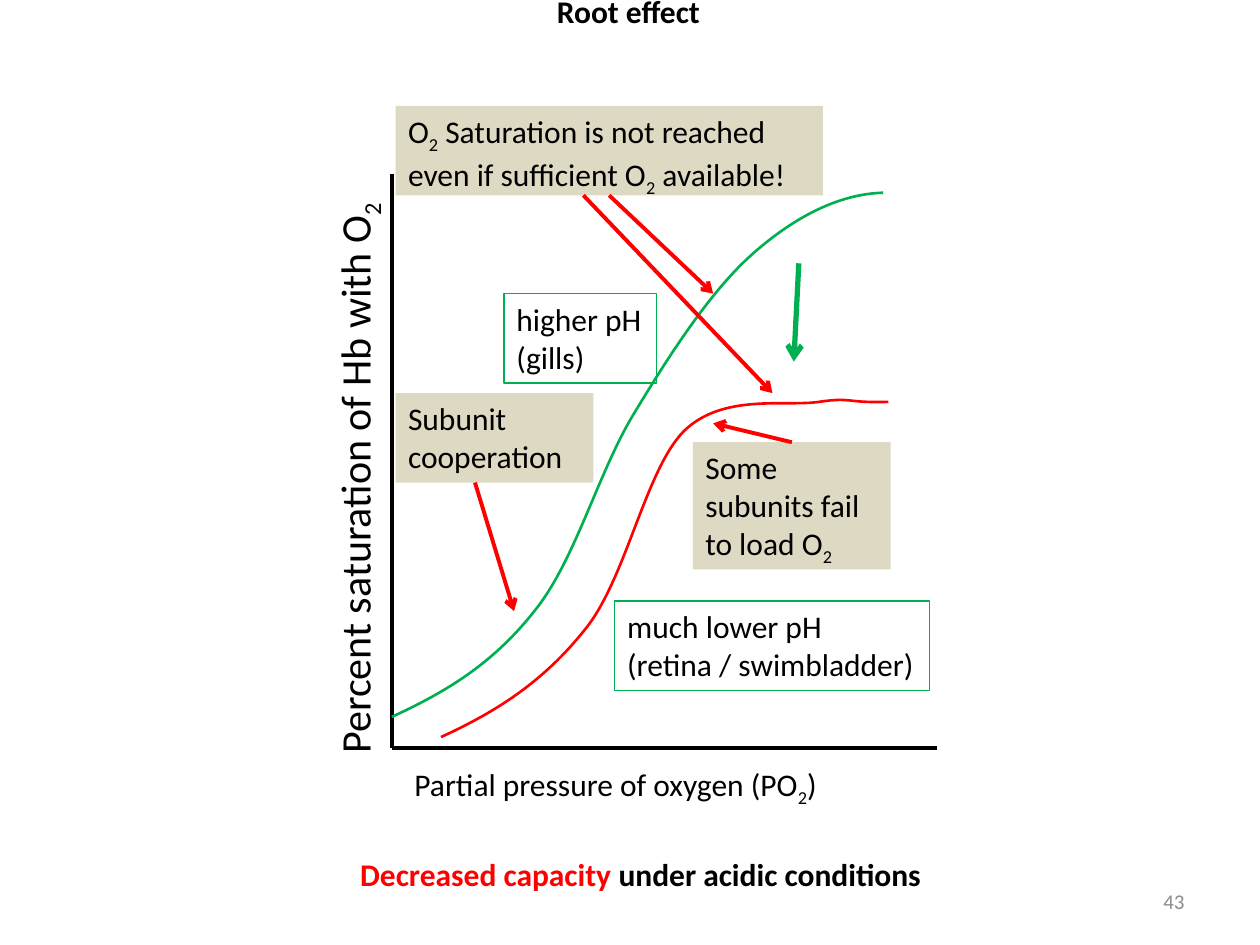
from dataclasses import dataclass

from lxml import etree
from pptx import Presentation
from pptx.dml.color import RGBColor
from pptx.enum.shapes import MSO_CONNECTOR
from pptx.enum.text import MSO_ANCHOR, MSO_AUTO_SIZE, PP_ALIGN
from pptx.oxml.ns import qn
from pptx.util import Inches, Pt

STRAIGHT = MSO_CONNECTOR.STRAIGHT
MIDDLE, TOP = MSO_ANCHOR.MIDDLE, MSO_ANCHOR.TOP
GROW, FIXED = MSO_AUTO_SIZE.SHAPE_TO_FIT_TEXT, MSO_AUTO_SIZE.NONE
LEFT, RIGHT = PP_ALIGN.LEFT, PP_ALIGN.RIGHT
TOP_SIDE, BOTTOM_SIDE = 0, 2


@dataclass(frozen=True)
class Theme:
    font: str = "Calibri"
    black: str = "000000"
    gray: str = "8C8C8C"
    green: str = "00B050"
    red: str = "FF0000"
    tan: str = "DDD9C3"
    small: int = 12
    body: int = 18
    large: int = 24


THEME = Theme()


def rgb(code):
    return RGBColor.from_string(code)


def style(run, size, color, bold=False):
    font = run.font
    font.name, font.size, font.bold = THEME.font, Pt(size), bold
    font.color.rgb = rgb(color)


def write(frame, lines, size=THEME.body, color=THEME.black, bold=False):
    """Fill a frame; the text between two underscores is subscript."""
    frame.text = "\n".join(lines)
    for para, words in zip(frame.paragraphs, lines):
        para.text = ""
        para.alignment = LEFT
        for i, part in enumerate(words.split("_")):
            if not part:
                continue
            run = para.add_run()
            run.text = part
            style(run, size, color, bold)
            if i % 2:
                run.font._element.set("baseline", "-25000")


def label(shapes, at, lines, fill=None, edge=None, wrap=False, **look):
    box = shapes.add_textbox(*map(Inches, at))
    frame = box.text_frame
    frame.word_wrap = wrap
    frame.auto_size = GROW
    write(frame, lines, **look)
    if fill:
        box.fill.solid()
        box.fill.fore_color.rgb = rgb(fill)
    if edge:
        box.line.color.rgb = rgb(edge)
        box.line.width = Pt(0.75)
    return box


def line(shapes, start, end, color, width=2.25, arrow=False):
    link = shapes.add_connector(STRAIGHT, *map(Inches, start + end))
    link.line.color.rgb = rgb(color)
    link.line.width = Pt(width)
    props = link._element.spPr
    if arrow:
        tip = etree.SubElement(props.find(qn("a:ln")), qn("a:tailEnd"))
        tip.set("type", "arrow")
    etree.SubElement(props, qn("a:effectLst"))
    return link


def curve(shapes, knots, color):
    """Draw joined cubic Bezier arcs: a start, then three points per arc."""
    first, *rest = [(Inches(x), Inches(y)) for x, y in knots]
    pen = shapes.build_freeform(*first)
    pen.add_line_segments(rest, close=False)
    shape = pen.convert_to_shape()

    # Gather each three line points into one Bezier arc
    track = next(shape._element.iter(qn("a:path")))
    legs = track.findall(qn("a:lnTo"))
    for k in range(0, len(legs), 3):
        arc = etree.SubElement(track, qn("a:cubicBezTo"))
        for leg in legs[k:k + 3]:
            arc.append(leg[0])
            track.remove(leg)

    shape.shadow.inherit = False
    shape.fill.background()
    shape.line.color.rgb = rgb(color)
    shape.line.width = Pt(1.5)


def heading(slide):
    title = slide.shapes.title
    title.left, title.top = Inches(4.32), Inches(-0.11)
    title.width, title.height = Inches(1.36), Inches(0.4)
    frame = title.text_frame
    frame.word_wrap = False
    frame.auto_size = GROW
    frame.vertical_anchor = TOP
    write(frame, ["Root effect"], bold=True)


def plot(shapes):
    # Axes and their names
    origin = (3.11, 5.94)
    line(shapes, (3.11, 1.38), origin, THEME.black)
    line(shapes, origin, (7.44, 5.94), THEME.black)
    label(shapes, (3.19, 6.02, 3.48, 0.4),
          ["Partial pressure of oxygen (PO_2_)"])
    name = label(shapes, (0.44, 3.46, 4.74, 0.5),
                 ["Percent saturation of Hb with O_2_"], size=THEME.large)
    name.rotation = 270

    # Saturation curves
    curve(shapes, [(3.11, 5.69), (3.57, 5.48), (3.93, 5.25), (4.25, 4.84),
                   (4.57, 4.44), (4.75, 3.74), (5.04, 3.27),
                   (5.33, 2.79), (5.65, 2.3), (5.98, 2.01),
                   (6.31, 1.72), (6.66, 1.54), (7.01, 1.53)], THEME.green)
    curve(shapes, [(3.5, 5.85), (3.96, 5.64), (4.32, 5.4), (4.64, 5),
                   (4.97, 4.6), (5.12, 3.73), (5.43, 3.42),
                   (5.74, 3.12), (6.23, 3.23), (6.5, 3.19),
                   (6.77, 3.15), (6.7, 3.2), (7.05, 3.19)], THEME.red)
    line(shapes, (6.34, 2.09), (6.3, 2.87), THEME.green, 3, arrow=True)

    # Curve names
    label(shapes, (4, 2.33, 1.21, 0.71), ["higher pH", "(gills)"],
          edge=THEME.green)
    label(shapes, (4.88, 4.77, 2.5, 0.71),
          ["much lower pH", "(retina / swimbladder)"], edge=THEME.green)


def notes(shapes):
    def note(at, lines):
        return label(shapes, at, lines, fill=THEME.tan, wrap=True)

    def point(start, end):
        return line(shapes, start, end, THEME.red, arrow=True)

    note((3.14, 3.12, 1.57, 0.71), ["Subunit", "cooperation"])
    point((3.77, 3.83), (4.08, 4.85))

    fail = note((5.5, 3.51, 1.57, 1.01), ["Some subunits fail to load O_2_"])
    point((6.29, 3.51), (5.66, 3.36)).begin_connect(fail, TOP_SIDE)

    limit = note((3.14, 0.84, 3.39, 0.71),
                 ["O_2_ Saturation is not reached",
                  "even if sufficient O_2_ available!"])
    point((4.83, 1.55), (5.66, 2.33)).begin_connect(limit, BOTTOM_SIDE)
    point((4.63, 1.55), (6.13, 3.12))


def footer(shapes):
    # Conclusion in two colours
    box = label(shapes, (2.76, 6.74, 4.69, 0.4), ["Decreased capacity"],
                color=THEME.red, bold=True)
    rest = box.text_frame.paragraphs[0].add_run()
    rest.text = " under acidic conditions"
    style(rest, THEME.body, THEME.black, bold=True)

    # Page number
    page = label(shapes, (7.17, 6.95, 2.33, 0.4), ["43"], wrap=True,
                 size=THEME.small, color=THEME.gray)
    frame = page.text_frame
    frame.auto_size = FIXED
    frame.vertical_anchor = MIDDLE
    frame.paragraphs[0].alignment = RIGHT


def main():
    deck = Presentation()
    deck.slide_width, deck.slide_height = Inches(10), Inches(7.5)
    slide = deck.slides.add_slide(deck.slide_layouts[5])
    heading(slide)
    plot(slide.shapes.add_group_shape().shapes)
    notes(slide.shapes)
    footer(slide.shapes)
    deck.save("out.pptx")


if __name__ == "__main__":
    main()
